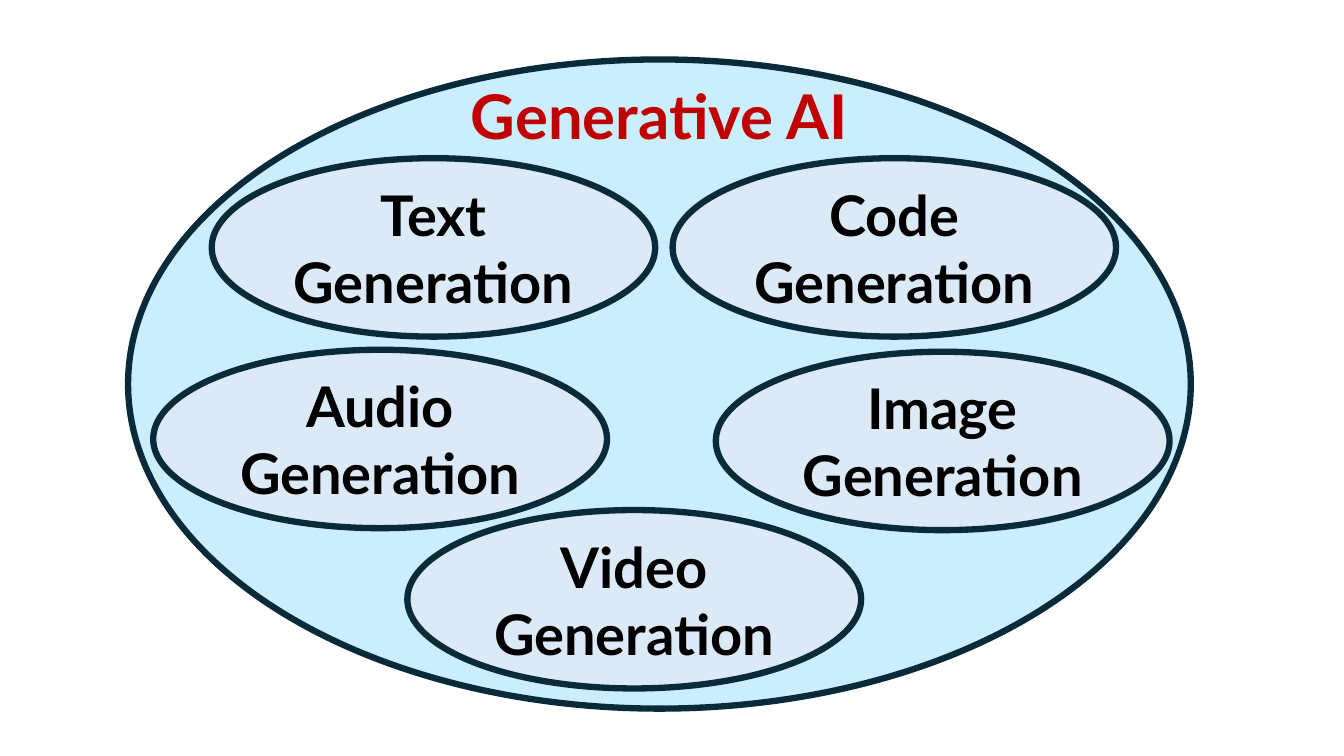
"""Build a slide that shows the branches of generative AI as nested ellipses."""
from dataclasses import dataclass

from pptx import Presentation
from pptx.dml.color import RGBColor
from pptx.enum.shapes import MSO_SHAPE
from pptx.enum.text import MSO_ANCHOR, MSO_AUTO_SIZE, PP_ALIGN
from pptx.shapes.autoshape import Shape
from pptx.slide import Slide
from pptx.util import Emu, Inches, Pt

SLIDE_WIDTH = Inches(13.33)
SLIDE_HEIGHT = Inches(7.5)
FONT = "Lato"

SKY = RGBColor(0xCA, 0xEE, 0xFB)
PALE_BLUE = RGBColor(0xDC, 0xEA, 0xF7)
NAVY = RGBColor(0x09, 0x2A, 0x39)
RED = RGBColor(0xC0, 0x00, 0x00)
BLACK = RGBColor(0x00, 0x00, 0x00)


@dataclass(frozen=True)
class Area:
    """Place on the slide, in percent of its width and height."""
    left: float
    top: float
    width: float
    height: float

    def lengths(self) -> tuple[Emu, Emu, Emu, Emu]:
        """Return left, top, width and height as slide lengths."""
        return (across(self.left), down(self.top),
                across(self.width), down(self.height))


@dataclass(frozen=True)
class Branch:
    """One kind of generation, with the percent position of its ellipse."""
    medium: str
    left: float
    top: float
    width: float


FIELD = Area(9.53, 7.87, 79.07, 85.87)
HEADING = Area(32.06, 10, 34, 10.27)
BRANCH_HEIGHT = 23.6
UPPER_WIDTH = 33
LOWER_WIDTH = 33.76
BRANCHES = (
    Branch("Text", 15.75, 20.93, UPPER_WIDTH),
    Branch("Audio", 11.4, 46.27, LOWER_WIDTH),
    Branch("Code", 50.04, 20.93, UPPER_WIDTH),
    Branch("Image", 53.26, 46.53, LOWER_WIDTH),
    Branch("Video", 30.31, 67.47, LOWER_WIDTH),
)


def across(percent: float) -> Emu:
    """Turn a percentage of the slide width into a length."""
    return Emu(round(SLIDE_WIDTH * percent / 100))


def down(percent: float) -> Emu:
    """Turn a percentage of the slide height into a length."""
    return Emu(round(SLIDE_HEIGHT * percent / 100))


def write(holder: Shape, text: str, size: int, color: RGBColor) -> None:
    """Put bold centred text in the middle of a shape."""
    frame = holder.text_frame
    frame.text = text
    frame.word_wrap = True
    frame.auto_size = MSO_AUTO_SIZE.NONE
    frame.vertical_anchor = MSO_ANCHOR.MIDDLE
    for paragraph in frame.paragraphs:
        paragraph.alignment = PP_ALIGN.CENTER
        for run in paragraph.runs:
            run.font.name = FONT
            run.font.size = Pt(size)
            run.font.bold = True
            run.font.color.rgb = color


def draw_ellipse(slide: Slide, area: Area, fill: RGBColor) -> Shape:
    """Draw an outlined ellipse that fills the area."""
    ellipse = slide.shapes.add_shape(MSO_SHAPE.OVAL, *area.lengths())
    ellipse.shadow.inherit = False
    ellipse.fill.solid()
    ellipse.fill.fore_color.rgb = fill
    ellipse.line.color.rgb = NAVY
    ellipse.line.width = Pt(4.5)
    return ellipse


def draw_heading(slide: Slide) -> None:
    """Place the title in front of the large ellipse."""
    heading = slide.shapes.title
    heading.left, heading.top, heading.width, heading.height = HEADING.lengths()
    write(heading, "Generative AI", 44, RED)
    slide.shapes.element.append(heading.element)


def draw_branch(slide: Slide, branch: Branch) -> None:
    """Draw one labelled ellipse inside the large one."""
    area = Area(branch.left, branch.top, branch.width, BRANCH_HEIGHT)
    ellipse = draw_ellipse(slide, area, PALE_BLUE)
    write(ellipse, f"{branch.medium}\nGeneration", 40, BLACK)


def main() -> None:
    """Build and save the presentation."""
    deck = Presentation()
    deck.slide_width = SLIDE_WIDTH
    deck.slide_height = SLIDE_HEIGHT
    slide = deck.slides.add_slide(deck.slide_layouts.get_by_name("Title Only"))
    draw_ellipse(slide, FIELD, SKY)
    draw_heading(slide)
    for branch in BRANCHES:
        draw_branch(slide, branch)
    deck.save("out.pptx")


if __name__ == "__main__":
    main()
